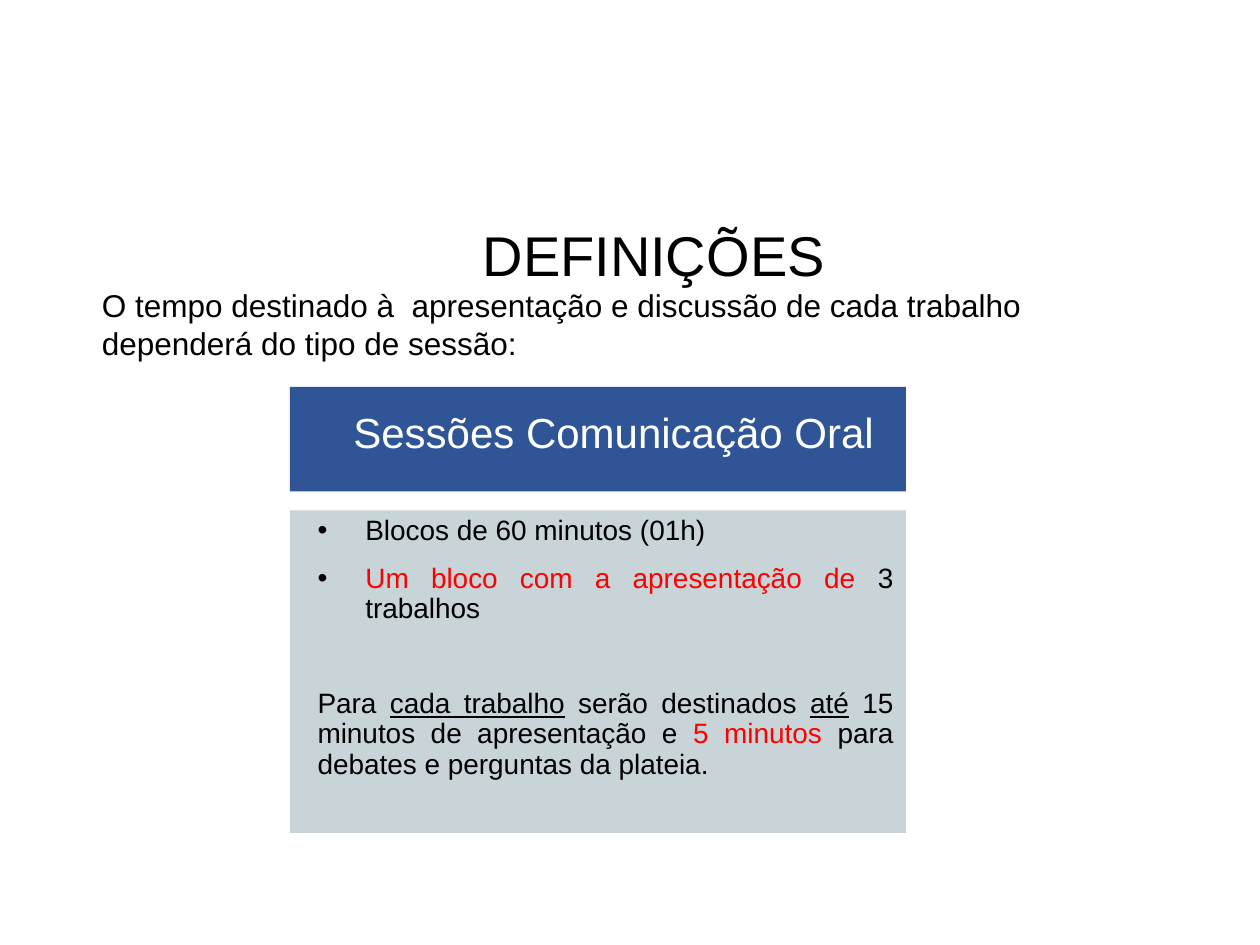
from lxml.etree import SubElement
from pptx import Presentation
from pptx.dml.color import RGBColor
from pptx.enum.shapes import MSO_SHAPE
from pptx.enum.text import MSO_ANCHOR, MSO_AUTO_SIZE, PP_ALIGN
from pptx.oxml.ns import qn
from pptx.util import Inches, Pt

BLACK = RGBColor(0x00, 0x00, 0x00)
WHITE = RGBColor(0xFF, 0xFF, 0xFF)
RED = RGBColor(0xFF, 0x00, 0x00)
BLUE = RGBColor(0x2F, 0x55, 0x97)
GREY = RGBColor(0xC9, 0xD4, 0xD9)

FONT = "Arial"
PANEL_LEFT, PANEL_WIDTH = 2.3, 4.89


def place(element, left, top, width, height):
    element.left, element.top = Inches(left), Inches(top)
    element.width, element.height = Inches(width), Inches(height)


def prepare_frame(element, anchor, inset=0.05):
    frame = element.text_frame
    frame.word_wrap = True
    frame.auto_size = MSO_AUTO_SIZE.NONE
    frame.vertical_anchor = anchor
    frame.margin_left = frame.margin_right = Inches(0.1)
    frame.margin_top = frame.margin_bottom = Inches(inset)
    return frame


def format_paragraph(paragraph, align, spacing=1.0, before=0, margin=0, indent=0, bullet=False):
    paragraph.alignment = align
    paragraph.line_spacing = spacing
    paragraph.space_before = Pt(before)
    properties = paragraph._p.get_or_add_pPr()
    properties.set("marL", str(Inches(margin)))
    properties.set("indent", str(Inches(indent)))
    if bullet:
        bullet_color = SubElement(properties, qn("a:buClr"))
        SubElement(bullet_color, qn("a:srgbClr"), val=str(BLACK))
        SubElement(properties, qn("a:buFont"), typeface=FONT)
        SubElement(properties, qn("a:buChar"), char="•")
    else:
        SubElement(properties, qn("a:buNone"))


def add_run(paragraph, text, size, color=BLACK, underline=False):
    run = paragraph.add_run()
    run.text = text
    run.font.name = FONT
    run.font.size = Pt(size)
    run.font.color.rgb = color
    run.font.underline = underline


def add_heading(slide):
    heading = slide.shapes.title
    place(heading, 0.9, 1.68, 8.58, 0.74)
    paragraph = prepare_frame(heading, MSO_ANCHOR.MIDDLE).paragraphs[0]
    format_paragraph(paragraph, PP_ALIGN.CENTER, 0.9)
    add_run(paragraph, "DEFINIÇÕES", 32)


def add_introduction(slide):
    introduction = slide.shapes.add_textbox(
        Inches(0.71), Inches(2.22), Inches(8.58), Inches(0.71))
    paragraph = prepare_frame(introduction, MSO_ANCHOR.TOP).paragraphs[0]
    format_paragraph(paragraph, PP_ALIGN.LEFT)
    add_run(paragraph, "O tempo destinado à  apresentação e discussão de cada "
                       "trabalho dependerá do tipo de sessão:", 18)


def add_session_banner(slide):
    banner = slide.shapes.add_shape(
        MSO_SHAPE.RECTANGLE, Inches(PANEL_LEFT), Inches(3.07),
        Inches(PANEL_WIDTH), Inches(0.83))
    banner.shadow.inherit = False
    banner.fill.solid()
    banner.fill.fore_color.rgb = BLUE
    banner.line.fill.background()
    paragraph = prepare_frame(banner, MSO_ANCHOR.MIDDLE, inset=0).paragraphs[0]
    format_paragraph(paragraph, PP_ALIGN.CENTER, 0.6, margin=0.5, indent=-0.25)
    add_run(paragraph, "Sessões Comunicação Oral", 24, WHITE)


def add_session_rules(slide):
    rules = slide.placeholders[1]
    place(rules, PANEL_LEFT, 4.05, PANEL_WIDTH, 2.56)
    rules.fill.solid()
    rules.fill.fore_color.rgb = GREY
    frame = prepare_frame(rules, MSO_ANCHOR.TOP)

    listed = {"margin": 0.5, "indent": -0.38, "bullet": True}
    plain = {"margin": 0.12}
    content = [
        (0, listed, [("Blocos de 60 minutos (01h)",)]),
        (10, listed, [("Um bloco com a apresentação de ", RED), ("3 trabalhos",)]),
        (37, plain, [
            ("Para ",),
            ("cada trabalho", BLACK, True),
            (" serão destinados ",),
            ("até", BLACK, True),
            (" 15 minutos de apresentação e ",),
            ("5 minutos ", RED),
            ("para debates e perguntas da plateia.",),
        ]),
    ]
    for position, (before, layout, runs) in enumerate(content):
        paragraph = frame.add_paragraph() if position else frame.paragraphs[0]
        format_paragraph(paragraph, PP_ALIGN.JUSTIFY, 0.9, before, **layout)
        for text, *style in runs:
            add_run(paragraph, text, 16, *style)


def main():
    presentation = Presentation()
    presentation.slide_width = Inches(10)
    presentation.slide_height = Inches(7.5)
    slide = presentation.slides.add_slide(presentation.slide_layouts[1])
    add_session_banner(slide)
    add_session_rules(slide)
    add_heading(slide)
    add_introduction(slide)
    presentation.save("out.pptx")


if __name__ == "__main__":
    main()
